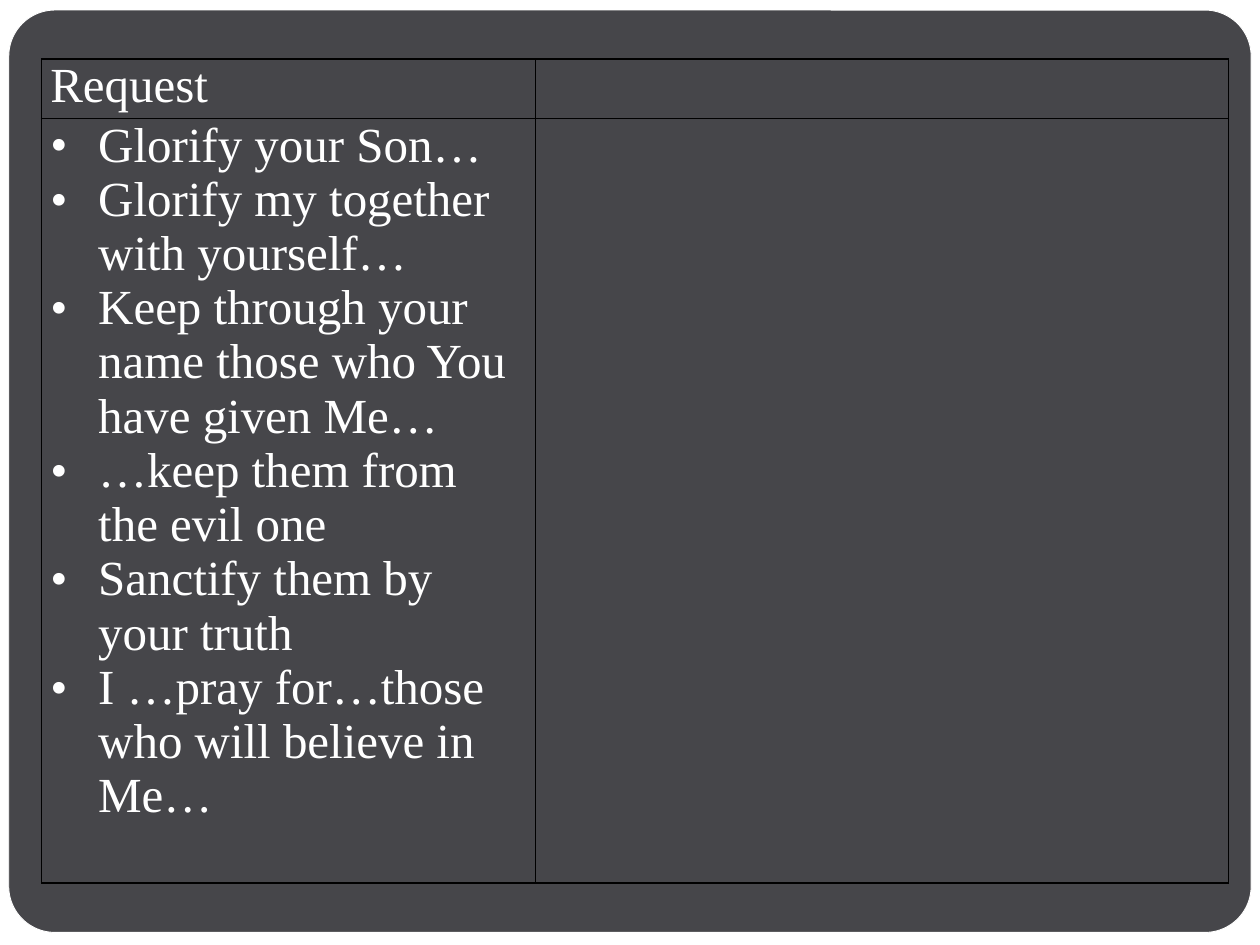
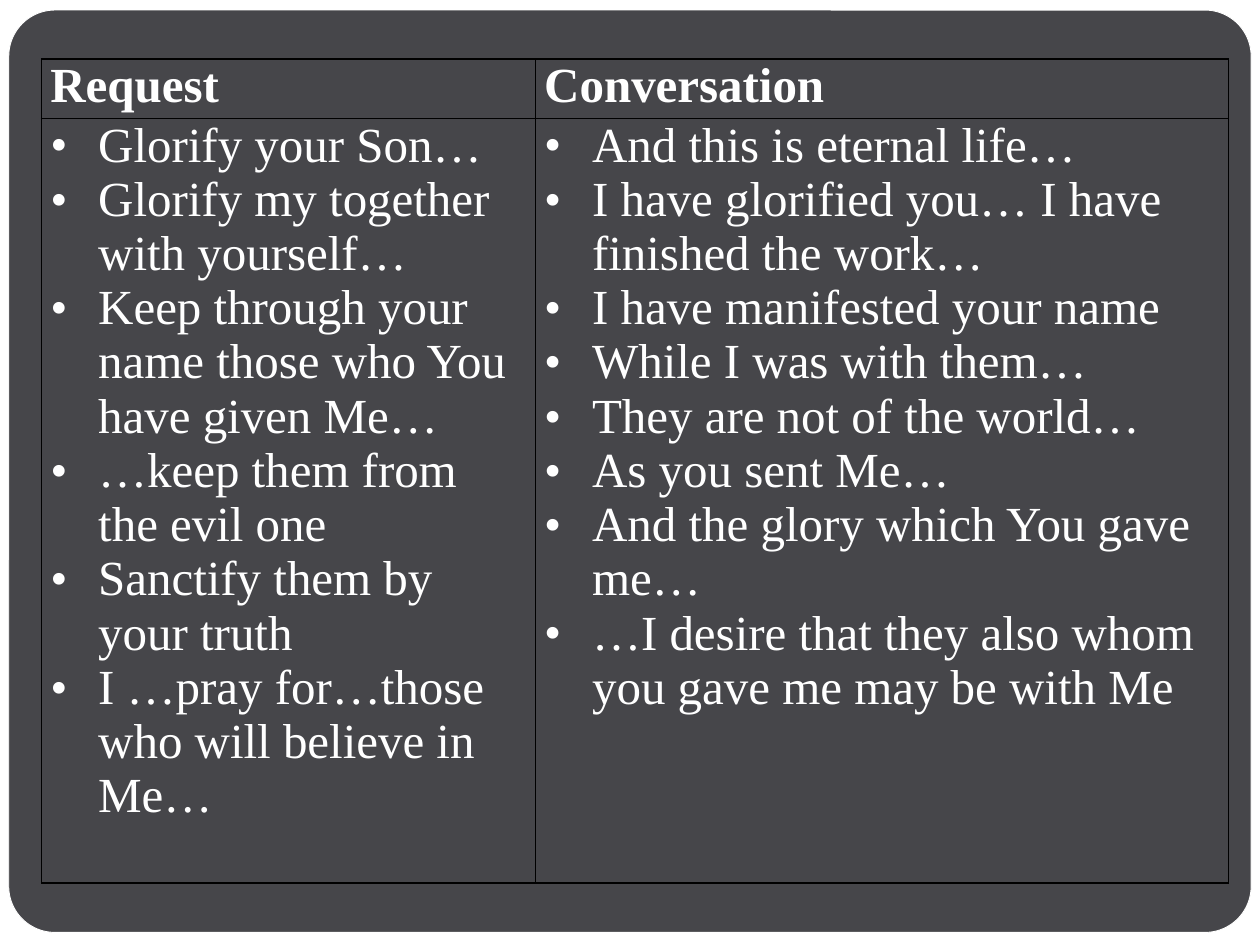
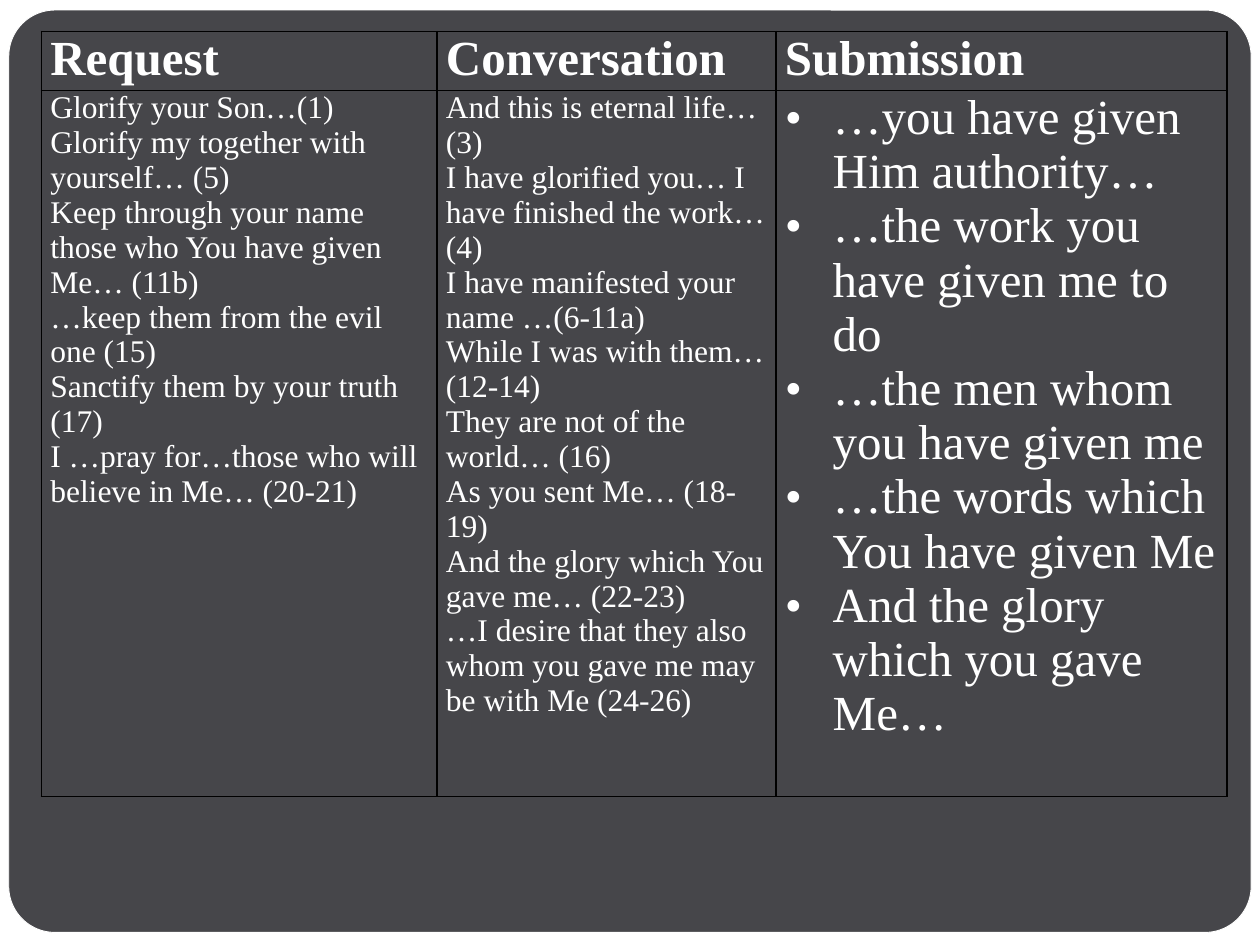
from lxml.etree import SubElement
from pptx import Presentation
from pptx.dml.color import RGBColor
from pptx.enum.shapes import MSO_SHAPE
from pptx.oxml import parse_xml
from pptx.oxml.ns import nsdecls, qn
from pptx.util import Inches, Pt

WHITE = RGBColor(0xFF, 0xFF, 0xFF)
DARK = RGBColor(0x46, 0x46, 0x4A)
BLACK = RGBColor(0x00, 0x00, 0x00)

REQUESTS = [
    "Glorify your Son…",
    "Glorify my together with yourself…",
    "Keep through your name those who You have given Me…",
    "…keep them from the evil one",
    "Sanctify them by your truth",
    "I …pray for…those who will believe in Me…",
]
REQUEST_VERSES = ["(1)", " (5)", " (11b)", " (15)", " (17)", " (20-21)"]

CONVERSATION = [
    "And this is eternal life…",
    "I have glorified you… I have finished the work…",
    "I have manifested your name",
    "While I was with them…",
    "They are not of the world…",
    "As you sent Me…",
    "And the glory which You gave me…",
    "…I desire that they also whom you gave me may be with Me",
]
CONVERSATION_VERSES = [" (3)", " (4)", " …(6-11a)", " (12-14)", " (16)",
                       " (18-19)", " (22-23)", " (24-26)"]

SUBMISSION = [
    "…you have given Him authority…",
    "…the work you have given me to do",
    "…the men whom you have given me",
    "…the words which You have given Me",
    "And the glory which you gave Me…",
]


def with_verses(lines, verses):
    return [line + verse for line, verse in zip(lines, verses)]


class Deck:
    """Holds the shared style and the current slide."""

    font = "Times New Roman"
    large, small = 28, 18
    left, header_height = 0.33, 0.47

    def __init__(self):
        self.prs = Presentation()
        self.prs.slide_width, self.prs.slide_height = Inches(10), Inches(7.5)
        self.layout = self.prs.slide_layouts[6]
        fill = self.prs.slide_master.background.fill
        fill.solid()
        fill.fore_color.rgb = DARK
        self.s = None

    def add_slide(self):
        self.s = self.prs.slides.add_slide(self.layout)

    def add_frame(self):
        """Draw the white page and dark panel, then share them through the layout."""
        page = self.add_panel(MSO_SHAPE.RECTANGLE, 0, 0, 10, 7.5, WHITE)
        panel = self.add_panel(MSO_SHAPE.ROUNDED_RECTANGLE, 0.07, 0.08, 9.86, 7.32, DARK)
        panel.adjustments[0] = 0.05
        for i, sp in enumerate((page, panel)):
            self.layout.shapes.element.insert(2 + i, sp.element)

    def add_panel(self, kind, left, top, width, height, color):
        sp = self.s.shapes.add_shape(
            kind, Inches(left), Inches(top), Inches(width), Inches(height))
        sp.shadow.inherit = False
        sp.fill.solid()
        sp.fill.fore_color.rgb = color
        sp.line.color.rgb = WHITE
        sp.line.width = Pt(0.5)
        return sp

    def add_table(self, top, body_height, columns):
        """Each column is (width, heading, heading bold, lines, size, bulleted)."""
        widths = [column[0] for column in columns]
        heights = [self.header_height, body_height]
        frame = self.s.shapes.add_table(
            2, len(columns), Inches(self.left), Inches(top),
            Inches(sum(widths)), Inches(sum(heights)))
        table = frame.table
        table.first_row = table.horz_banding = False
        for row, height in zip(table.rows, heights):
            row.height = Inches(height)
        for c, (width, heading, bold, lines, size, bulleted) in enumerate(columns):
            table.columns[c].width = Inches(width)
            self.fill_cell(table.cell(0, c), [heading], self.large, bold)
            self.fill_cell(table.cell(1, c), lines, size, False, bulleted)

    def fill_cell(self, cell, lines, size, bold, bulleted=False):
        margins = {"margin_left": 0.07, "margin_right": 0.07,
                   "margin_top": 0, "margin_bottom": 0}
        for name, value in margins.items():
            setattr(cell, name, Inches(value))
        cell.fill.background()
        self.add_borders(cell)
        tf = cell.text_frame
        tf.text = "\n".join(lines)
        for p in tf.paragraphs:
            style = {"name": self.font, "size": Pt(size), "bold": bold}
            for r in p.runs:
                for name, value in style.items():
                    setattr(r.font, name, value)
                r.font.color.rgb = WHITE
            if bulleted:
                self.add_bullet(p)

    def add_borders(self, cell):
        tcPr = cell._tc.get_or_add_tcPr()
        for i, side in enumerate("LRTB"):
            tcPr.insert(i, parse_xml(
                f'<a:ln{side} {nsdecls("a")} w="{Pt(1)}"><a:solidFill>'
                f'<a:srgbClr val="{BLACK}"/></a:solidFill></a:ln{side}>'))

    def add_bullet(self, p):
        pPr = p._p.get_or_add_pPr()
        pPr.set("marL", str(Inches(0.38)))
        pPr.set("indent", str(Inches(-0.38)))
        SubElement(pPr, qn("a:buFont")).set("typeface", self.font)
        SubElement(pPr, qn("a:buChar")).set("char", "•")


def main():
    deck = Deck()

    # Requests alone
    deck.add_slide()
    deck.add_frame()
    deck.add_table(0.47, 6.07, [
        (3.92, "Request", False, REQUESTS, deck.large, True),
        (5.5, "", False, [], deck.large, False),
    ])

    # Requests and conversation
    deck.add_slide()
    deck.add_table(0.47, 6.07, [
        (3.92, "Request", True, REQUESTS, deck.large, True),
        (5.5, "Conversation", True, CONVERSATION, deck.large, True),
    ])

    # Verses, with submission added
    deck.add_slide()
    deck.add_table(0.25, 5.6, [
        (3.14, "Request", True, with_verses(REQUESTS, REQUEST_VERSES),
         deck.small, False),
        (2.69, "Conversation", True, with_verses(CONVERSATION, CONVERSATION_VERSES),
         deck.small, False),
        (3.58, "Submission", True, SUBMISSION, deck.large, True),
    ])

    deck.prs.save("out.pptx")


if __name__ == "__main__":
    main()
